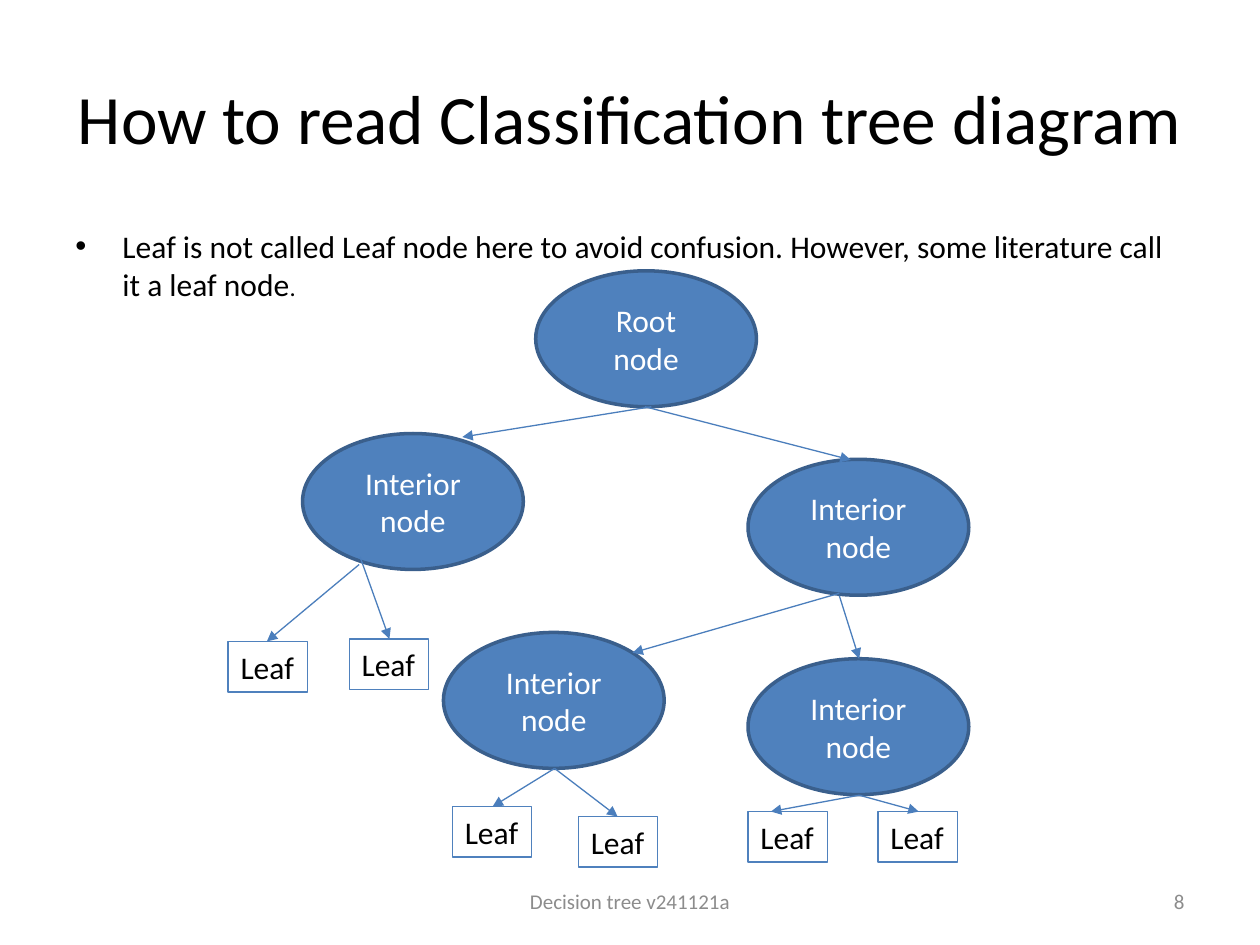
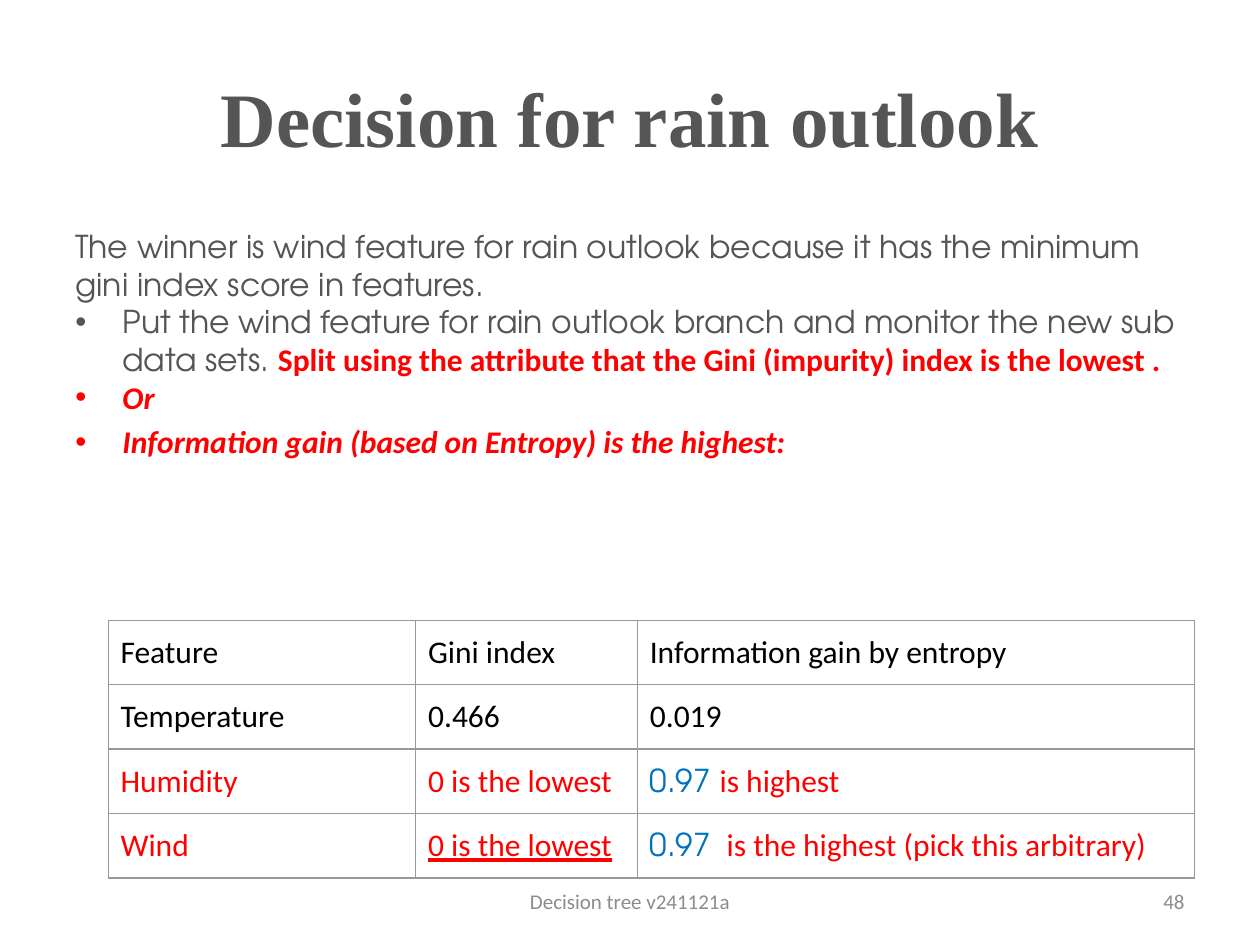
from dataclasses import dataclass

from lxml.etree import SubElement
from pptx import Presentation
from pptx.dml.color import RGBColor as Color
from pptx.enum.shapes import MSO_CONNECTOR as Connector, MSO_SHAPE as Shape
from pptx.enum.text import MSO_ANCHOR as Anchor, MSO_AUTO_SIZE as AutoSize, PP_ALIGN as Align
from pptx.oxml import parse_xml
from pptx.oxml.ns import nsdecls, qn
from pptx.util import Cm, Pt


@dataclass(frozen=True)
class Theme:
    black = Color(0, 0, 0)
    white = Color(255, 255, 255)
    charcoal = Color(0x55, 0x55, 0x55)
    footer_grey = Color(0x8C, 0x8C, 0x8C)
    red = Color(255, 0, 0)
    blue = Color(0x00, 0x70, 0xC0)
    node_fill = Color(0x4F, 0x81, 0xBD)
    node_line = Color(0x3A, 0x5F, 0x8C)
    arrow = Color(0x4B, 0x7E, 0xBC)
    grid = "999999"
    sans = "Calibri"
    geometric = "TeX Gyre Adventor"
    serif = "Times New Roman"
    title_size = Pt(39.6)
    serif_title_size = Pt(44)
    text_size = Pt(18)
    stop_size = Pt(14)
    footer_size = Pt(12)
    node_weight = Pt(2)
    thin_weight = Pt(0.75)


theme = Theme()

# Text styles
plain = {"name": theme.sans, "size": theme.text_size, "color": theme.black}
light = {**plain, "color": theme.white}
footer = {**plain, "size": theme.footer_size, "color": theme.footer_grey}
geometric = {**plain, "name": theme.geometric, "color": theme.charcoal}
red = {**plain, "color": theme.red}
red_bold = {**red, "bold": True}
red_italic = {**red_bold, "italic": True}
red_underlined = {**red, "underline": True}
blue_number = {**geometric, "color": theme.blue}
title_style = {**plain, "size": theme.title_size}
serif_title = {"name": theme.serif, "size": theme.serif_title_size,
               "color": theme.charcoal, "bold": True}

# Paragraph formats
left = {"alignment": Align.LEFT}
centred = {"alignment": Align.CENTER}
right = {"alignment": Align.RIGHT}
spaced = {**left, "space_before": Pt(3.6)}


def write(frame, paragraphs, **frame_format):
    """Fill a text frame with (format, bulleted, runs) paragraphs."""
    for name, value in {"word_wrap": True, **frame_format}.items():
        setattr(frame, name, value)
    for index, (paragraph_format, bulleted, runs) in enumerate(paragraphs):
        paragraph = frame.add_paragraph() if index else frame.paragraphs[0]
        for name, value in paragraph_format.items():
            setattr(paragraph, name, value)
        if bulleted:
            properties = paragraph._p.get_or_add_pPr()
            properties.set("marL", str(Cm(0.95)))
            properties.set("indent", str(-Cm(0.95)))
            SubElement(properties, qn("a:buFont")).set("typeface", "Arial")
            SubElement(properties, qn("a:buChar")).set("char", "•")
        for text, style in runs:
            run = paragraph.add_run()
            run.text = text
            for name, value in style.items():
                if name == "color":
                    run.font.color.rgb = value
                else:
                    setattr(run.font, name, value)


def add_box(slide, x, y, width, height, paragraphs, **frame_format):
    box = slide.shapes.add_textbox(Cm(x), Cm(y), Cm(width), Cm(height))
    write(box.text_frame, paragraphs, **frame_format)


presentation = Presentation()
presentation.slide_width, presentation.slide_height = Cm(25.4), Cm(19.05)

# Title, body and footer of every slide
pages = [
    ("How to read Classification tree diagram", title_style, "8", [
        (spaced, True, [
            ("Leaf is not called Leaf node here to avoid confusion. However, "
             "some literature call it a leaf node", plain),
            (".", {**plain, "size": theme.stop_size})]),
    ]),
    ("Decision for rain outlook", serif_title, "48", [
        (left, False, [("The winner is wind feature for rain outlook because it has "
                        "the minimum gini index score in features.", geometric)]),
        (left, True, [
            ("Put the wind feature for rain outlook branch and monitor the new sub "
             "data sets. ", geometric),
            ("Split using the attribute that the Gini (impurity) index is the "
             "lowest .", red_bold)]),
        (left, True, [("Or", red_italic)]),
        (spaced, True, [("Information gain (based on Entropy) is the highest:", red_italic)]),
    ]),
]
slides = []
for title, style, number, body in pages:
    slide = presentation.slides.add_slide(presentation.slide_layouts[6])
    slides.append(slide)
    middle = {"vertical_anchor": Anchor.MIDDLE}
    add_box(slide, 1.27, 0.76, 22.86, 3.18, [(centred, False, [(title, style)])], **middle)
    add_box(slide, 1.27, 4.45, 22.86, 12.57, body)
    add_box(slide, 8.68, 17.66, 8.04, 1.02,
            [(centred, False, [("Decision tree v241121a", footer)])], **middle)
    add_box(slide, 18.2, 17.66, 5.93, 1.02, [(right, False, [(number, footer)])], **middle)

tree_slide, decision_slide = slides

# Tree: root and interior nodes
nodes = [("Root node", 10.8, 5.46), ("Interior node", 6.1, 8.74),
         ("Interior node", 15.08, 9.26), ("Interior node", 8.94, 12.75),
         ("Interior node", 15.08, 13.28)]
for label, x, y in nodes:
    node = tree_slide.shapes.add_shape(Shape.OVAL, Cm(x), Cm(y), Cm(4.45), Cm(2.74))
    node.shadow.inherit = False
    node.fill.solid()
    node.fill.fore_color.rgb = theme.node_fill
    node.line.color.rgb = theme.node_line
    node.line.width = theme.node_weight
    write(node.text_frame, [(centred, False, [(label, light)])],
          vertical_anchor=Anchor.MIDDLE)

# Tree: leaves
leaves = [(4.6, 12.93), (7.04, 12.88), (9.12, 16.26),
          (11.66, 16.46), (15.08, 16.36), (17.7, 16.36)]
for x, y in leaves:
    leaf = tree_slide.shapes.add_shape(Shape.RECTANGLE, Cm(x), Cm(y), Cm(1.6), Cm(1.02))
    leaf.shadow.inherit = False
    leaf.fill.background()
    leaf.line.color.rgb = theme.node_fill
    leaf.line.width = theme.thin_weight
    write(leaf.text_frame, [(left, False, [("Leaf", plain)])], word_wrap=False,
          auto_size=AutoSize.SHAPE_TO_FIT_TEXT, vertical_anchor=Anchor.TOP)

# Tree: arrows from parent to child
arrows = [
    ((13.13, 8.2), (9.32, 8.81)), ((13, 8.2), (17.15, 9.27)),
    ((7.24, 11.38), (5.38, 12.93)), ((7.26, 11.23), (7.85, 12.88)),
    ((16.92, 11.96), (12.75, 13.16)), ((16.92, 12.01), (17.32, 13.28)),
    ((11.18, 15.49), (9.93, 16.26)), ((11.18, 15.49), (12.45, 16.46)),
    ((17.32, 16.03), (15.54, 16.36)), ((17.32, 16.03), (18.52, 16.36)),
]
for start, end in arrows:
    arrow = tree_slide.shapes.add_connector(
        Connector.STRAIGHT, *(Cm(value) for value in start + end))
    arrow.line.color.rgb = theme.arrow
    arrow.line.width = theme.thin_weight
    SubElement(arrow.line._get_or_add_ln(), qn("a:tailEnd")).set("type", "triangle")
    SubElement(arrow._element.spPr, qn("a:effectLst"))

# Feature table: each cell is a list of runs
rows = [
    [[("Feature", plain)], [("Gini index", plain)], [("Information gain by entropy", plain)]],
    [[("Temperature", plain)], [("0.466", plain)], [("0.019", plain)]],
    [[("Humidity", red)], [("0 is the lowest", red)],
     [("0.97 ", blue_number), ("is highest", red)]],
    [[("Wind", red)], [("0 is the lowest", red_underlined)],
     [("0.97 ", blue_number), (" is the highest (pick this arbitrary)", red)]],
]
column_widths = [6.2, 4.47, 11.23]
row_height = 1.3
table = decision_slide.shapes.add_table(
    len(rows), len(column_widths), Cm(2.18), Cm(12.5),
    Cm(sum(column_widths)), Cm(row_height * len(rows))).table
table.first_row = table.horz_banding = False
for column, width in zip(table.columns, column_widths):
    column.width = Cm(width)
cell_format = {"vertical_anchor": Anchor.MIDDLE, "margin_left": Cm(0.25),
               "margin_right": Cm(0.25), "margin_top": Cm(0.25), "margin_bottom": Cm(0.25)}
for row, contents in zip(table.rows, rows):
    row.height = Cm(row_height)
    for cell, runs in zip(row.cells, contents):
        for name, value in cell_format.items():
            setattr(cell, name, value)
        cell.fill.solid()
        cell.fill.fore_color.rgb = theme.white
        write(cell.text_frame, [(left, False, runs)])
        for index, side in enumerate(("lnL", "lnR", "lnT", "lnB")):
            cell._tc.get_or_add_tcPr().insert(index, parse_xml(
                f'<a:{side} {nsdecls("a")} w="{theme.thin_weight}"><a:solidFill>'
                f'<a:srgbClr val="{theme.grid}"/></a:solidFill></a:{side}>'))

presentation.save("out.pptx")
